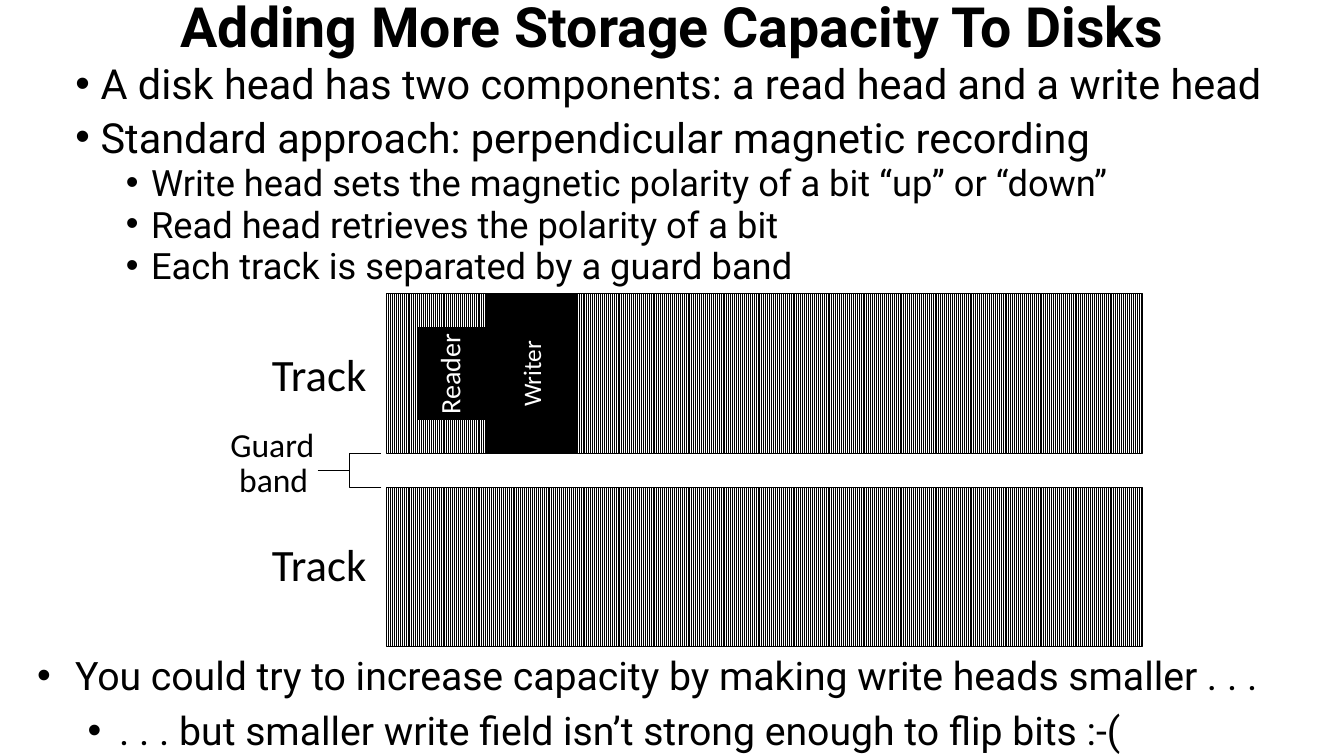
from dataclasses import dataclass

from lxml import etree
from pptx import Presentation
from pptx.dml.color import RGBColor
from pptx.enum.dml import MSO_PATTERN
from pptx.enum.shapes import MSO_SHAPE
from pptx.enum.text import MSO_ANCHOR, PP_ALIGN
from pptx.oxml.ns import qn
from pptx.shapes.autoshape import Shape
from pptx.slide import Slide
from pptx.text.text import _Paragraph as Paragraph
from pptx.util import Pt

RECTANGLE = MSO_SHAPE.RECTANGLE
LEFT_BRACE = MSO_SHAPE.LEFT_BRACE
LIGHT_VERTICAL = MSO_PATTERN.LIGHT_VERTICAL
CENTER = PP_ALIGN.CENTER
MIDDLE = MSO_ANCHOR.MIDDLE


@dataclass(frozen=True)
class Theme:
    black: RGBColor = RGBColor(0, 0, 0)
    white: RGBColor = RGBColor(255, 255, 255)
    text_font: str = "Roboto"
    label_font: str = "Calibri"
    bullet_font: str = "Arial"
    title_size: float = 39.6
    point_size: float = 29.6
    detail_size: float = 25.9
    closing_size: float = 28
    track_size: float = 32
    guard_size: float = 24
    reader_size: float = 20
    writer_size: float = 18
    line_width: float = 0.75


@dataclass(frozen=True)
class Box:
    left: float
    top: float
    width: float
    height: float


@dataclass(frozen=True)
class BulletStyle:
    level: int
    size: float
    margin: float
    hanging: float
    space_before: float
    line_spacing: float


@dataclass(frozen=True)
class Bullet:
    text: str
    style: BulletStyle


@dataclass(frozen=True)
class Label:
    text: str
    box: Box
    size: float
    color: RGBColor
    rotation: float = 0


THEME = Theme()
POINT = BulletStyle(0, THEME.point_size, 18, 18, 10, 0.8)
DETAIL = BulletStyle(1, THEME.detail_size, 54, 18, 5, 0.8)
CLOSING = BulletStyle(0, THEME.closing_size, 27, 27, 5.6, 1)
CLOSING_DETAIL = BulletStyle(1, THEME.closing_size, 58.5, 22.5, 5.6, 1)

TITLE = "Adding More Storage Capacity To Disks"
TITLE_BOX = Box(0, 0, 960, 42)
BODY_BOX = Box(46.8, 45, 893, 174)
BODY = [
    Bullet("A disk head has two components: a read head and a write head", POINT),
    Bullet("Standard approach: perpendicular magnetic recording", POINT),
    Bullet("Write head sets the magnetic polarity of a bit “up” or “down”", DETAIL),
    Bullet("Read head retrieves the polarity of a bit", DETAIL),
    Bullet("Each track is separated by a guard band", DETAIL),
]
CLOSING_BOX = Box(19.5, 462, 924, 78)
CLOSING_BODY = [
    Bullet("You could try to increase capacity by making write heads smaller . . .", CLOSING),
    Bullet(". . . but smaller write field isn’t strong enough to flip bits :-(", CLOSING_DETAIL),
]

TRACK_HEIGHT = 114
GUARD_HEIGHT = 24
TRACK_TOPS = [210 + row * (TRACK_HEIGHT + GUARD_HEIGHT) for row in range(2)]
TRACKS = [Box(276, top, 540, TRACK_HEIGHT) for top in TRACK_TOPS]
GUARD_BRACE = Box(227.5, TRACK_TOPS[0] + TRACK_HEIGHT, 45, GUARD_HEIGHT)
HEADS = [Box(346.5, 210, 66, TRACK_HEIGHT), Box(298.5, 234, 48, 66)]
LABELS = [
    Label("Track", Box(183, 244, 90, 46), THEME.track_size, THEME.black),
    Label("Track", Box(183, 380, 90, 46), THEME.track_size, THEME.black),
    Label("Guard", Box(143, 299.5, 103, 36), THEME.guard_size, THEME.black),
    Label("band", Box(144, 324, 103, 36), THEME.guard_size, THEME.black),
    Label("Writer", Box(334.5, 252.5, 90, 29), THEME.writer_size, THEME.white, 270),
    Label("Reader", Box(276, 251.5, 90, 31.5), THEME.reader_size, THEME.white, 270),
]


def add_text_box(slide: Slide, box: Box) -> Shape:
    shape = slide.shapes.add_textbox(Pt(box.left), Pt(box.top), Pt(box.width), Pt(box.height))
    shape.text_frame.word_wrap = True
    return shape


def format_runs(
    paragraph: Paragraph, size: float, font: str, color: RGBColor, bold: bool = False
) -> None:
    for run in paragraph.runs:
        run.font.size = Pt(size)
        run.font.name = font
        run.font.bold = bold
        run.font.color.rgb = color


def add_title(slide: Slide) -> None:
    text_frame = add_text_box(slide, TITLE_BOX).text_frame
    text_frame.vertical_anchor = MIDDLE
    text_frame.text = TITLE
    paragraph = text_frame.paragraphs[0]
    paragraph.alignment = CENTER
    paragraph.line_spacing = 0.9
    format_runs(paragraph, THEME.title_size, THEME.text_font, THEME.black, True)


def add_bullets(slide: Slide, box: Box, bullets: list[Bullet]) -> None:
    text_frame = add_text_box(slide, box).text_frame
    text_frame.text = "\n".join(bullet.text for bullet in bullets)
    for paragraph, bullet in zip(text_frame.paragraphs, bullets):
        style = bullet.style
        paragraph.level = style.level
        paragraph.line_spacing = style.line_spacing
        paragraph.space_before = Pt(style.space_before)
        format_runs(paragraph, style.size, THEME.text_font, THEME.black)
        properties = paragraph._p.get_or_add_pPr()
        properties.set("marL", str(Pt(style.margin)))
        properties.set("indent", str(Pt(-style.hanging)))
        etree.SubElement(properties, qn("a:buFont"), typeface=THEME.bullet_font)
        etree.SubElement(properties, qn("a:buChar"), char="•")


def add_outlined_shape(slide: Slide, kind: MSO_SHAPE, box: Box) -> Shape:
    shape = slide.shapes.add_shape(
        kind, Pt(box.left), Pt(box.top), Pt(box.width), Pt(box.height)
    )
    shape.shadow.inherit = False
    shape.line.color.rgb = THEME.black
    shape.line.width = Pt(THEME.line_width)
    return shape


def add_track(slide: Slide, box: Box) -> None:
    fill = add_outlined_shape(slide, RECTANGLE, box).fill
    fill.patterned()
    fill.pattern = LIGHT_VERTICAL
    fill.fore_color.rgb = THEME.black
    fill.back_color.rgb = THEME.white


def add_guard_brace(slide: Slide) -> None:
    shape = add_outlined_shape(slide, LEFT_BRACE, GUARD_BRACE)
    shape.fill.background()
    shape.adjustments[0] = 0
    shape.adjustments[1] = 0.5


def add_head(slide: Slide, box: Box) -> None:
    fill = add_outlined_shape(slide, RECTANGLE, box).fill
    fill.solid()
    fill.fore_color.rgb = THEME.black


def add_label(slide: Slide, label: Label) -> None:
    shape = add_text_box(slide, label.box)
    shape.rotation = label.rotation
    shape.text_frame.text = label.text
    paragraph = shape.text_frame.paragraphs[0]
    paragraph.alignment = CENTER
    format_runs(paragraph, label.size, THEME.label_font, label.color)


def main() -> None:
    presentation = Presentation()
    presentation.slide_width = Pt(960)
    presentation.slide_height = Pt(540)
    slide = presentation.slides.add_slide(presentation.slide_layouts[6])
    for track in TRACKS:
        add_track(slide, track)
    add_guard_brace(slide)
    add_title(slide)
    add_bullets(slide, BODY_BOX, BODY)
    add_bullets(slide, CLOSING_BOX, CLOSING_BODY)
    for head in HEADS:
        add_head(slide, head)
    for label in LABELS:
        add_label(slide, label)
    presentation.save("out.pptx")


if __name__ == "__main__":
    main()
